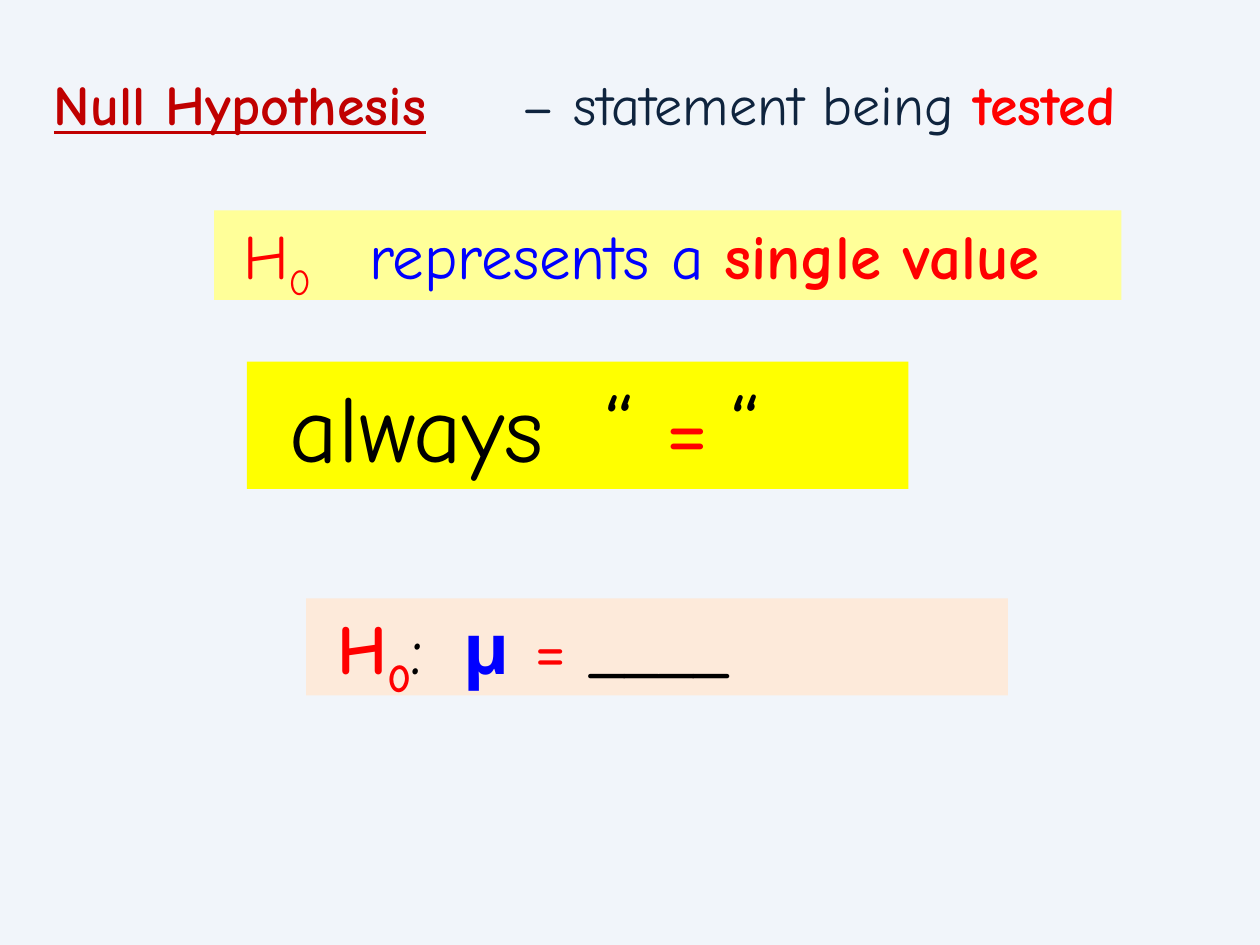
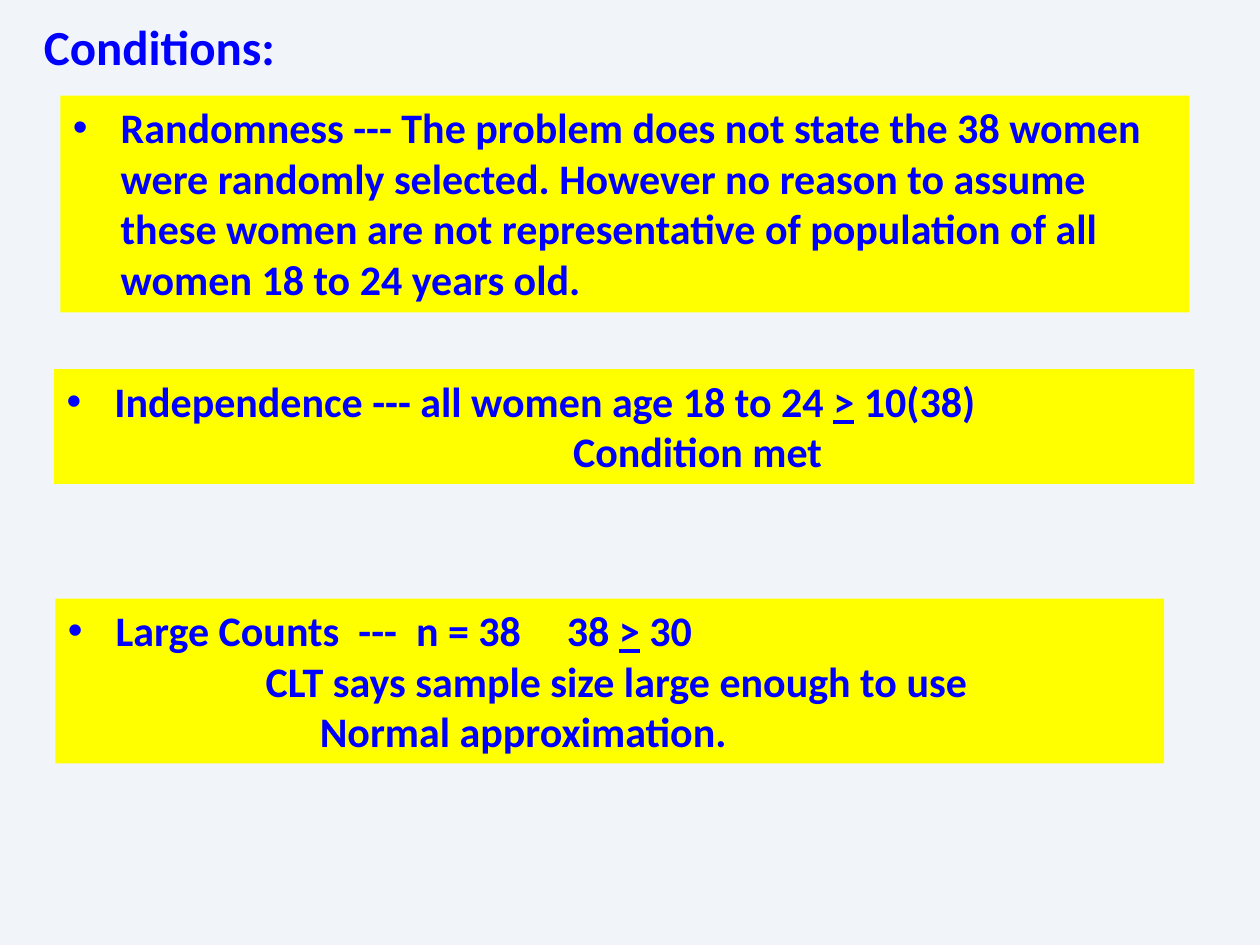
from pptx import Presentation
from pptx.dml.color import RGBColor
from pptx.enum.shapes import MSO_SHAPE
from pptx.enum.text import MSO_ANCHOR
from pptx.oxml.xmlchemy import OxmlElement
from pptx.util import Inches, Pt

BACKGROUND = RGBColor(0xF1, 0xF5, 0xFA)
YELLOW = RGBColor(0xFF, 0xFF, 0x00)
PALE_YELLOW = RGBColor(0xFF, 0xFF, 0x99)
PEACH = RGBColor(0xFD, 0xEA, 0xDA)
RED = RGBColor(0xFF, 0x00, 0x00)
DARK_RED = RGBColor(0xC0, 0x00, 0x00)
BLUE = RGBColor(0x00, 0x00, 0xFF)
NAVY = RGBColor(0x0F, 0x24, 0x3E)
BLACK = RGBColor(0x00, 0x00, 0x00)

HAND = "Comic Neue"
PLAIN = "Calibri"
BULLET_INDENT = 0.38

# Each run is (text, colour, styles): b bold, u underlined, s subscript.
HYPOTHESIS = [
    dict(at=(0.33, 0.5, 3.73, 0.64), size=32,
         runs=[("Null Hypothesis", DARK_RED, "bu")]),
    dict(at=(4.04, 0.5, 6.26, 0.64), size=32,
         runs=[("– statement being ", NAVY, ""), ("tested", RED, "b")]),
    dict(at=(1.7, 1.67, 7.2, 0.71), size=36, fill=PALE_YELLOW, inset=0.23, tabs=[0.91],
         runs=[("H", RED, ""), ("0", RED, "s"), ("\trepresents a ", BLUE, ""),
               ("single value", RED, "b")]),
    dict(at=(1.96, 2.87, 5.25, 1.01), size=54, fill=YELLOW, inset=0.34, tabs=[2.5, 3.84],
         runs=[("always\t“ ", BLACK, ""), ("=", RED, ""), ("\t“", BLACK, "")]),
    dict(at=(2.43, 4.75, 5.57, 0.77), size=40, fill=PEACH, inset=0.25, tabs=[1.05],
         runs=[("H", RED, "b"), ("0", RED, "bs"), (":\t", BLACK, ""), ("μ ", BLUE, "b"),
               ("=", RED, ""), (" ____", BLACK, "")]),
]

CONDITIONS_TITLE = "Conditions:"
# Each condition: place, bulleted runs, tab stops, then (indent, line) pairs.
CONDITIONS = [
    ((0.48, 0.76, 8.96, 1.72),
     [("Randomness --- The problem does not state the 38 women were randomly selected. "
       "However no reason to assume these women are not representative of population "
       "of all women 18 to 24 years old.", BLUE, "b")], [], []),
    ((0.43, 2.93, 9.05, 0.91),
     [("Independence --- all women age 18 to 24 ", BLUE, "b"), (">", BLUE, "bu"),
      (" 10(38)", BLUE, "b")], [], [(4.02, "Condition met")]),
    ((0.44, 4.75, 8.8, 1.31),
     [("Large Counts  ---  n = 38\t38 ", BLUE, "b"), (">", BLUE, "bu"),
      (" 30", BLUE, "b")], [3.96],
     [(1.57, "CLT says sample size large enough to use"), (2, "Normal approximation.")]),
]


def add_box(s, at, fill=None, inset=0.1):
    place = [Inches(v) for v in at]
    if fill is None:
        sp = s.shapes.add_textbox(*place)
    else:
        sp = s.shapes.add_shape(MSO_SHAPE.RECTANGLE, *place)
        sp.shadow.inherit = False
        sp.fill.solid()
        sp.fill.fore_color.rgb = fill
        sp.line.fill.background()
    tf = sp.text_frame
    tf.word_wrap = True
    tf.vertical_anchor = MSO_ANCHOR.TOP
    tf.margin_left = Inches(inset)
    return tf


def write(p, runs, size, font, indent=0, bullet=False, tabs=()):
    pPr = p._p.get_or_add_pPr()
    pPr.set("algn", "l")
    pPr.set("marL", str(Inches(indent)))
    pPr.set("indent", str(-Inches(indent) if bullet else 0))
    if bullet:
        bu_font = OxmlElement("a:buFont")
        bu_font.set("typeface", "Arial")
        bu = OxmlElement("a:buChar")
        bu.set("char", "•")
        pPr.extend([bu_font, bu])
    if tabs:
        tab_list = OxmlElement("a:tabLst")
        for pos in tabs:
            tab = OxmlElement("a:tab")
            tab.set("pos", str(Inches(pos)))
            tab.set("algn", "l")
            tab_list.append(tab)
        pPr.append(tab_list)
    for text, color, styles in runs:
        r = p.add_run()
        r.text = text
        r.font.name = font
        r.font.size = Pt(size)
        r.font.color.rgb = color
        r.font.bold = "b" in styles
        r.font.underline = "u" in styles
        if "s" in styles:
            r.font._element.set("baseline", "-25000")


def add_slide(prs):
    s = prs.slides.add_slide(prs.slide_layouts[6])
    s.background.fill.solid()
    s.background.fill.fore_color.rgb = BACKGROUND
    return s


def build_hypothesis(prs):
    s = add_slide(prs)
    for box in HYPOTHESIS:
        tf = add_box(s, box["at"], box.get("fill"), box.get("inset", 0.1))
        write(tf.paragraphs[0], box["runs"], box["size"], HAND, tabs=box.get("tabs", ()))


def build_conditions(prs):
    s = add_slide(prs)
    tf = add_box(s, (0.25, 0.08, 3.42, 0.57))
    write(tf.paragraphs[0], [(CONDITIONS_TITLE, BLUE, "b")], 28, PLAIN)
    for at, runs, tabs, lines in CONDITIONS:
        tf = add_box(s, at, YELLOW)
        write(tf.paragraphs[0], runs, 24, PLAIN, BULLET_INDENT, True, tabs)
        for indent, line in lines:
            write(tf.add_paragraph(), [(line, BLUE, "b")], 24, PLAIN, indent)


def main():
    prs = Presentation()
    prs.slide_width, prs.slide_height = Inches(10), Inches(7.5)
    build_hypothesis(prs)
    build_conditions(prs)
    prs.save("out.pptx")


if __name__ == "__main__":
    main()
